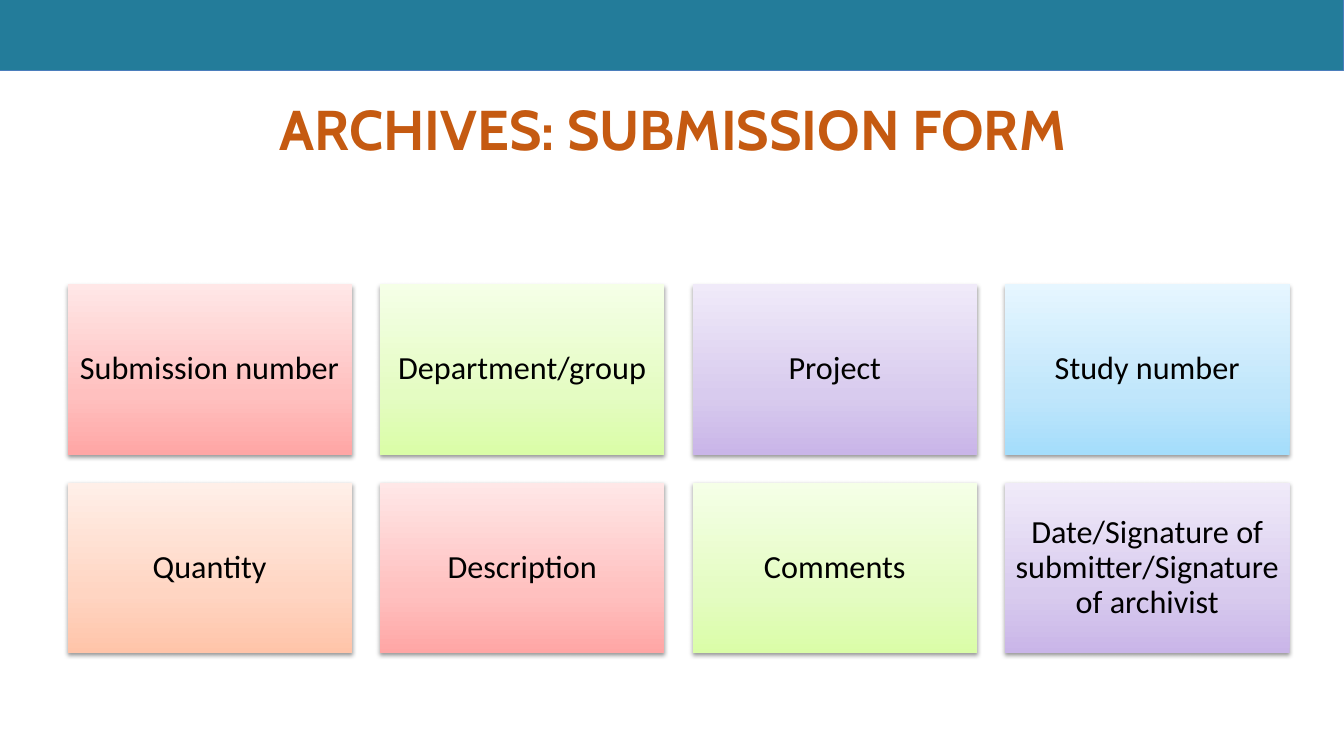
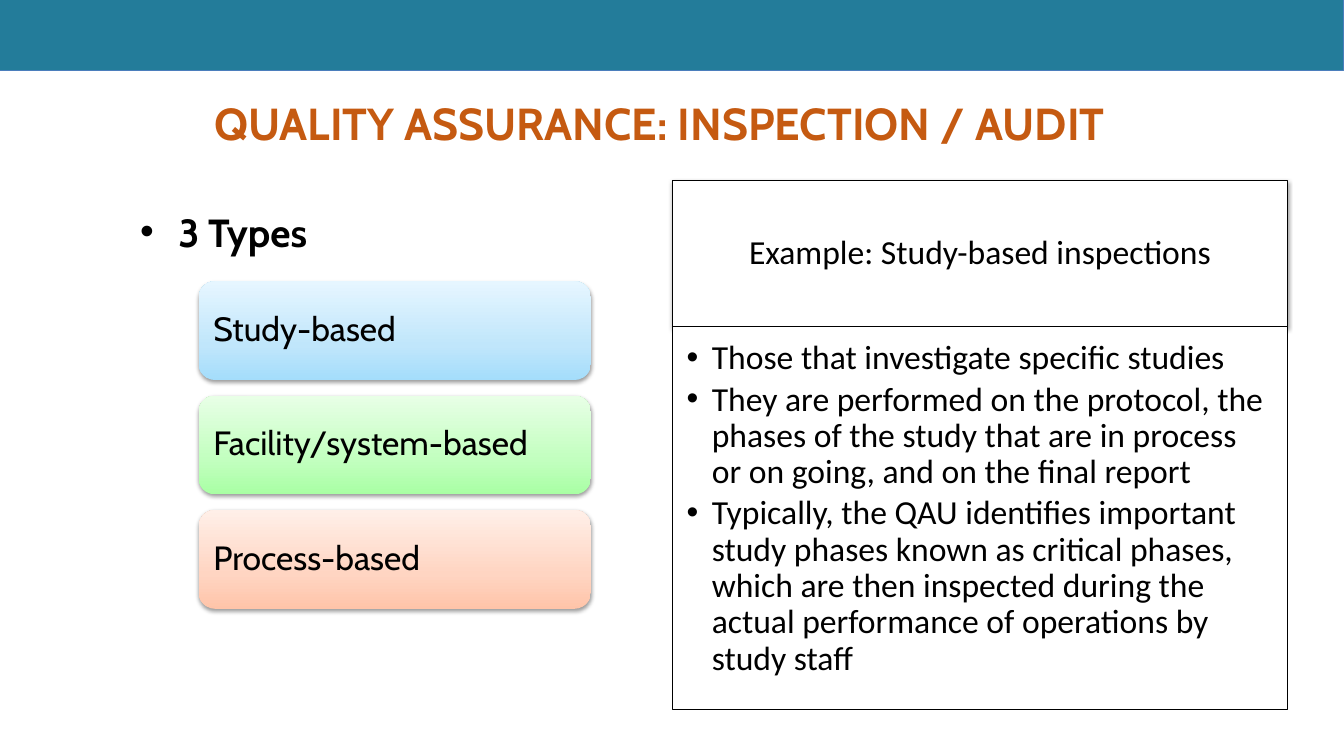
"""Build two slides on archive submission and quality assurance."""
from lxml import etree
from pptx import Presentation
from pptx import util as u
from pptx.dml import color
from pptx.enum import shapes, text
from pptx.oxml import ns

BAND, BAND_LINE, TITLE = "237C9A", "4B7EBC", "C55A11"
BLACK, WHITE = "000000", "FFFFFF"
HEAD_FONT, BODY_FONT = "Cabin", "Calibri"
RED = ("FFA6A5", "FFC0BF", "FFE7E7")
LIME = ("DAFDA7", "E4FCC2", "F5FFE7")
PURPLE = ("C9B5E8", "D8CBEE", "F0EAF9")
BLUE = ("A4DDFB", "C0E6FB", "E6F6FF")
ORANGE = ("FFC4A9", "FFD5C2", "FFEFE8")
GREEN = ("A9FFA4", "C2FFBF", "E8FFE6")
STOPS = (0, 35, 100)
RECT = shapes.MSO_SHAPE.RECTANGLE
ROUNDED = shapes.MSO_SHAPE.ROUNDED_RECTANGLE
LEFT, CENTER = text.PP_ALIGN.LEFT, text.PP_ALIGN.CENTER
TOP, MIDDLE = text.MSO_ANCHOR.TOP, text.MSO_ANCHOR.MIDDLE

FORM_FIELDS = [
    ("Submission number", RED),
    ("Department/group", LIME),
    ("Project", PURPLE),
    ("Study number", BLUE),
    ("Quantity", ORANGE),
    ("Description", RED),
    ("Comments", LIME),
    ("Date/Signature of submitter/Signature of archivist", PURPLE),
]
INSPECTION_TYPES = [
    ("Study-based", BLUE),
    ("Facility/system-based", GREEN),
    ("Process-based", ORANGE),
]
EXAMPLE_POINTS = [
    "Those that investigate specific studies",
    "They are performed on the protocol, the phases of the study that are in "
    "process or on going, and on the final report",
    "Typically, the QAU identifies important study phases known as critical "
    "phases, which are then inspected during the actual performance of "
    "operations by study staff",
]


def rgb(value):
    """Return the colour for a hex string."""
    return color.RGBColor.from_string(value)


def add_child(parent, tag, **attributes):
    """Append a DrawingML element and return it."""
    child = etree.SubElement(parent, ns.qn(tag))
    for name, value in attributes.items():
        child.set(name, str(value))
    return child


def add_bullet(para, margin, hanging):
    """Give a paragraph a hanging round bullet."""
    properties = para._p.get_or_add_pPr()
    properties.set("marL", str(u.Inches(margin)))
    properties.set("indent", str(-u.Inches(hanging)))
    add_child(properties, "a:buFont", typeface="Arial")
    add_child(properties, "a:buChar", char="•")


def write(shape, lines, size=24, font=BODY_FONT, ink=BLACK, bold=False,
          align=LEFT, anchor=MIDDLE, insets=(0.1, 0.1, 0.1, 0.1),
          spacing=0.9, after=0, bullet=None):
    """Fill a shape with formatted paragraphs."""
    frame = shape.text_frame
    frame.word_wrap = True
    frame.auto_size = text.MSO_AUTO_SIZE.NONE
    frame.vertical_anchor = anchor
    (frame.margin_left, frame.margin_top,
     frame.margin_right, frame.margin_bottom) = map(u.Inches, insets)
    for index, line in enumerate(lines):
        para = frame.add_paragraph() if index else frame.paragraphs[0]
        if bullet:
            add_bullet(para, *bullet)
        para.alignment = align
        para.line_spacing = spacing
        para.space_before = u.Pt(0)
        para.space_after = u.Pt(after)
        span = para.add_run()
        span.text = line
        span.font.size = u.Pt(size)
        span.font.name = font
        span.font.bold = bold
        span.font.color.rgb = rgb(ink)


def fill_gradient(shape, colours):
    """Fill a shape with three stops running from bottom to top."""
    shape.fill.gradient()
    shape.fill.gradient_angle = 90
    stops = shape._element.spPr.find(".//" + ns.qn("a:gsLst"))
    for stop in list(stops):
        stops.remove(stop)
    for position, colour in zip(STOPS, colours):
        stop = add_child(stops, "a:gs", pos=position * 1000)
        add_child(stop, "a:srgbClr", val=colour)


def cast_shadow(shape):
    """Give a shape a soft shadow below it."""
    effects = shape._element.spPr.find(ns.qn("a:effectLst"))
    shadow = add_child(effects, "a:outerShdw", blurRad=u.Pt(3.1),
                       dist=u.Pt(1.6), dir=90 * 60000, rotWithShape=0)
    add_child(add_child(shadow, "a:srgbClr", val=BLACK), "a:alpha", val=38000)


def add_panel(slide, place, fill, line=None, kind=RECT, shadow=True):
    """Add a box with a plain or gradient fill."""
    panel = slide.shapes.add_shape(kind, *map(u.Inches, place))
    panel.shadow.inherit = False
    if isinstance(fill, str):
        panel.fill.solid()
        panel.fill.fore_color.rgb = rgb(fill)
    else:
        fill_gradient(panel, fill)
    if line:
        panel.line.color.rgb = rgb(line)
        panel.line.width = u.Pt(0.75)
    else:
        panel.line.fill.background()
    if shadow:
        cast_shadow(panel)
    return panel


def add_slide(deck, title, place, size):
    """Add a slide with the top band and a title."""
    slide = deck.slides.add_slide(deck.slide_layouts[5])
    add_panel(slide, (0, 0, 13.33, 0.7), BAND, BAND_LINE, shadow=False)
    box = slide.shapes.title
    box.left, box.top, box.width, box.height = map(u.Inches, place)
    write(box, [title], size=size, font=HEAD_FONT, ink=TITLE, bold=True,
          align=CENTER, anchor=TOP, insets=(0.1, 0.05, 0.1, 0), spacing=1.0)
    return slide


def add_form_slide(deck):
    """Add the grid of submission form fields."""
    slide = add_slide(deck, "ARCHIVES: SUBMISSION FORM",
                      (0.67, 0.89, 12, 0.65), 40)
    for index, (label, colours) in enumerate(FORM_FIELDS):
        row, column = divmod(index, 4)
        place = (0.67 + 3.1 * column, 2.82 + 1.97 * row, 2.82, 1.69)
        write(add_panel(slide, place, colours), [label], size=23, align=CENTER)


def add_inspection_slide(deck):
    """Add the inspection types and the example."""
    slide = add_slide(deck, "QUALITY ASSURANCE: INSPECTION / AUDIT",
                      (1.31, 0.9, 10.47, 0.65), 32)
    heading = slide.shapes.add_textbox(
        *map(u.Inches, (0.79, 1.78, 2.95, 1.2)))
    write(heading, ["3 Types"], size=28, font=HEAD_FONT, bold=True, anchor=TOP,
          insets=(0.1, 0.05, 0.1, 0), spacing=1.5, bullet=(0.88, 0.38))
    for index, (label, colours) in enumerate(INSPECTION_TYPES):
        place = (1.97, 2.79 + 1.135 * index, 3.89, 0.98)
        write(add_panel(slide, place, colours, kind=ROUNDED), [label],
              font=HEAD_FONT)
    header = add_panel(slide, (6.67, 1.79, 6.1, 1.45), WHITE, BLACK)
    write(header, ["Example: Study-based inspections"], align=CENTER,
          insets=(0.19, 0.11, 0.19, 0.11))
    points = add_panel(slide, (6.67, 3.24, 6.1, 3.8), WHITE, BLACK,
                       shadow=False)
    write(points, EXAMPLE_POINTS, anchor=TOP, insets=(0.14, 0.14, 0.19, 0.21),
          after=3.6, bullet=(0.25, 0.25))


def main():
    """Build and save the deck."""
    deck = Presentation()
    deck.slide_width, deck.slide_height = u.Inches(13.33), u.Inches(7.5)
    add_form_slide(deck)
    add_inspection_slide(deck)
    deck.save("out.pptx")


if __name__ == "__main__":
    main()
